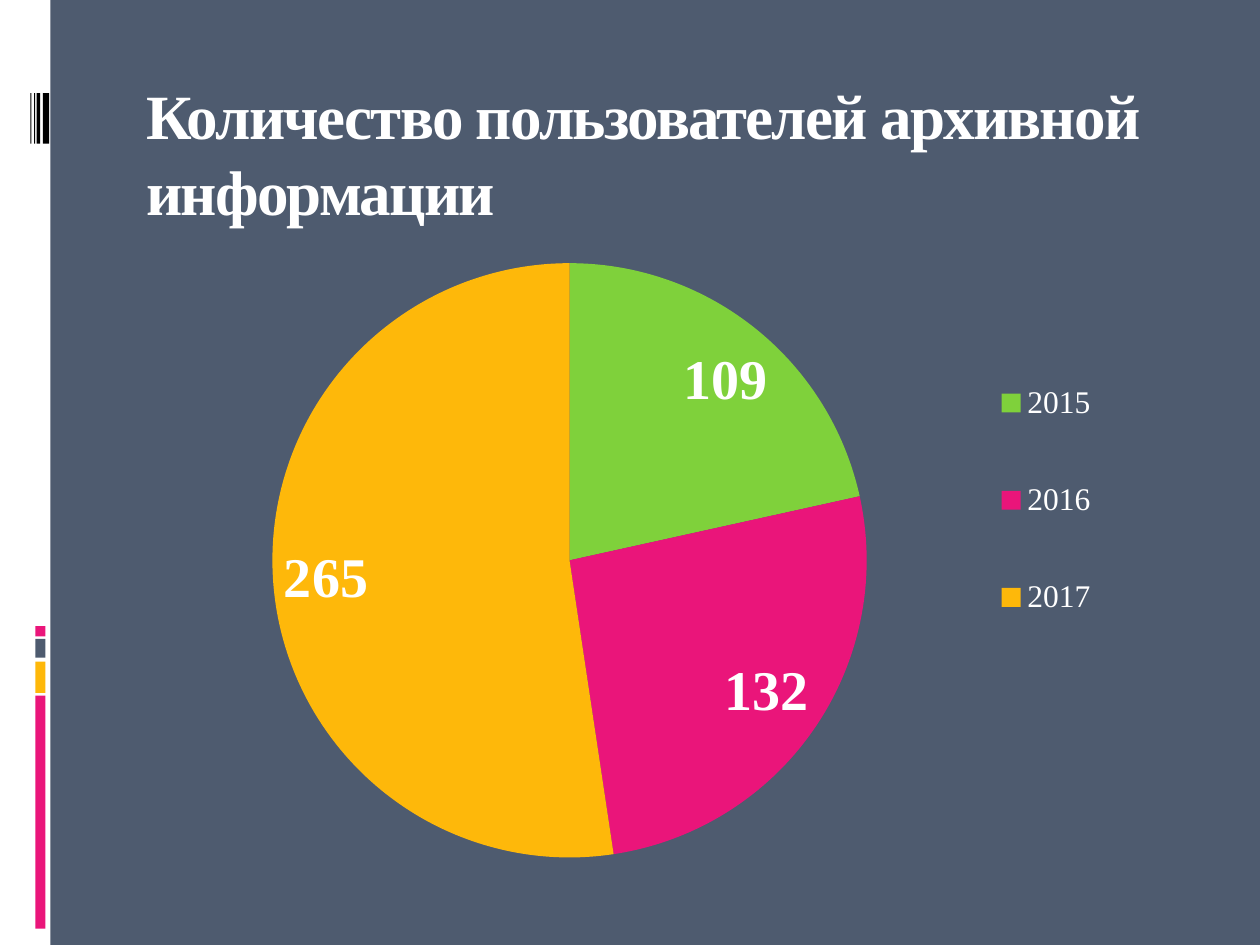
from dataclasses import dataclass

import lxml.etree
import pptx
import pptx.chart.data
import pptx.dml.color
import pptx.enum.chart
import pptx.enum.shapes
import pptx.enum.text
import pptx.oxml.ns
import pptx.util

WIDE, HIGH = 10, 7.5


@dataclass(frozen=True)
class Theme:
    slate: str = "4E5B6F"
    white: str = "FFFFFF"
    black: str = "000000"
    pink: str = "EA157A"
    gold: str = "FEB80A"
    green: str = "7FD13B"
    face: str = "Times New Roman"
    base: str = "Calibri"
    title: int = 36
    label: int = 32
    key: int = 18
    small: int = 10


@dataclass(frozen=True)
class Box:
    """An area given as shares of its parent."""
    left: float
    top: float
    wide: float
    high: float

    def place(self) -> tuple:
        inch = pptx.util.Inches
        return (inch(self.left * WIDE), inch(self.top * HIGH),
                inch(self.wide * WIDE), inch(self.high * HIGH))


@dataclass(frozen=True)
class Bar:
    start: float
    size: float
    color: str


@dataclass(frozen=True)
class Slice:
    year: str
    count: int
    color: str
    nudge: tuple[float, float]


THEME = Theme()

# Bars of the side strip, in inches along the stack
STACK = [
    Bar(4.97, 0.08, THEME.pink),
    Bar(5.07, 0.15, THEME.slate),
    Bar(5.25, 0.25, THEME.gold),
    Bar(5.52, 1.85, THEME.pink),
]
CODE = [
    Bar(0.24, 0.01, THEME.black),
    Bar(0.27, 0.01, THEME.black),
    Bar(0.29, 0.03, THEME.black),
    Bar(0.34, 0.05, THEME.black),
]
# Label nudges are shares of the chart's size
SLICES = [
    Slice("2015", 109, THEME.green, (0.015, 0.024)),
    Slice("2016", 132, THEME.pink, (0.001, -0.003)),
    Slice("2017", 265, THEME.gold, (0.003, -0.005)),
]


def rgb(color: str) -> pptx.dml.color.RGBColor:
    return pptx.dml.color.RGBColor.from_string(color)


def style(font, size: int, face: str, bold: bool = False) -> None:
    font.size = pptx.util.Pt(size)
    font.name = face
    font.bold = bold
    font.color.rgb = rgb(THEME.white)


def block(slide, box: Box, color: str) -> None:
    kind = pptx.enum.shapes.MSO_SHAPE.RECTANGLE
    shape = slide.shapes.add_shape(kind, *box.place())
    shape.shadow.inherit = False
    shape.fill.solid()
    shape.fill.fore_color.rgb = rgb(color)
    shape.line.fill.background()


def strip(slide) -> None:
    block(slide, Box(0, 0, 0.04, 1), THEME.white)
    for bar in STACK:
        block(slide, Box(0.028, bar.start / HIGH, 0.008, bar.size / HIGH), bar.color)
    for bar in CODE:
        block(slide, Box(bar.start / WIDE, 0.74 / HIGH, bar.size / WIDE, 0.4 / HIGH),
              bar.color)


def head(slide, text: str) -> None:
    shape = slide.shapes.add_textbox(*Box(0.1, 0.075, 0.85, 1 / HIGH).place())
    frame = shape.text_frame
    frame.word_wrap = True
    frame.vertical_anchor = pptx.enum.text.MSO_ANCHOR.TOP
    frame.margin_left = pptx.util.Inches(0.16)
    frame.margin_top = pptx.util.Inches(0.04)
    para = frame.paragraphs[0]
    para.line_spacing = pptx.util.Pt(43.5)
    run = para.add_run()
    run.text = text
    style(run.font, THEME.title, THEME.face, True)
    run._r.get_or_add_rPr().set("spc", "-100")


def layout(parts: list[tuple]):
    """Make a manual chart layout from tags and values."""
    name = pptx.oxml.ns.qn
    root = lxml.etree.Element(name("c:layout"))
    hand = lxml.etree.SubElement(root, name("c:manualLayout"))
    for tag, value in parts:
        lxml.etree.SubElement(hand, name("c:" + tag)).set("val", str(value))
    return root


def frame(box: Box) -> list[tuple]:
    return [("xMode", "edge"), ("yMode", "edge"), ("x", box.left),
            ("y", box.top), ("w", box.wide), ("h", box.high)]


def pie(slide, box: Box, slices: list[Slice]) -> None:
    enum = pptx.enum.chart
    name = pptx.oxml.ns.qn
    data = pptx.chart.data.CategoryChartData()
    data.categories = [part.year for part in slices]
    data.add_series("Series 1", [part.count for part in slices])
    chart = slide.shapes.add_chart(enum.XL_CHART_TYPE.PIE, *box.place(), data).chart
    chart.has_title = False
    style(chart.font, THEME.small, THEME.base)

    # Slices and their values
    plot = chart.plots[0]
    plot.vary_by_categories = True
    series = plot.series[0]
    labels = series.data_labels
    labels.show_value = True
    labels.show_percentage = False
    labels.position = enum.XL_LABEL_POSITION.INSIDE_END
    style(labels.font, THEME.label, THEME.face, True)
    for spot, part in enumerate(slices):
        point = series.points[spot]
        point.format.fill.solid()
        point.format.fill.fore_color.rgb = rgb(part.color)
        label = point.data_label
        style(label.font, THEME.label, THEME.face, True)
        label.position = enum.XL_LABEL_POSITION.INSIDE_END
        node = labels._element.findall(name("c:dLbl"))[spot]
        node.find(name("c:idx")).addnext(layout(list(zip("xy", part.nudge))))

    # Legend
    chart.has_legend = True
    key = chart.legend
    key.position = enum.XL_LEGEND_POSITION.RIGHT
    key.include_in_layout = False
    style(key.font, THEME.key, THEME.face)

    # Fixed places for the pie and the legend
    area = chart._chartSpace.find(".//" + name("c:plotArea"))
    legend = key._element
    for owner in (area, legend):
        for old in owner.findall(name("c:layout")):
            owner.remove(old)
    inner = [("layoutTarget", "inner")]
    area.insert(0, layout(inner + frame(Box(0.18, 0.03, 0.53, 0.94))))
    spot = legend.find(name("c:legendPos"))
    spot.addnext(layout(frame(Box(0.8, 0.125, 0.14, 0.56))))


def main() -> None:
    deck = pptx.Presentation()
    deck.slide_width = pptx.util.Inches(WIDE)
    deck.slide_height = pptx.util.Inches(HIGH)
    slide = deck.slides.add_slide(deck.slide_layouts[6])
    slide.background.fill.solid()
    slide.background.fill.fore_color.rgb = rgb(THEME.slate)
    strip(slide)
    head(slide, "Количество пользователей архивной информации")
    pie(slide, Box(0.056, 0.258, 0.89, 0.67), SLICES)
    deck.save("out.pptx")


if __name__ == "__main__":
    main()
